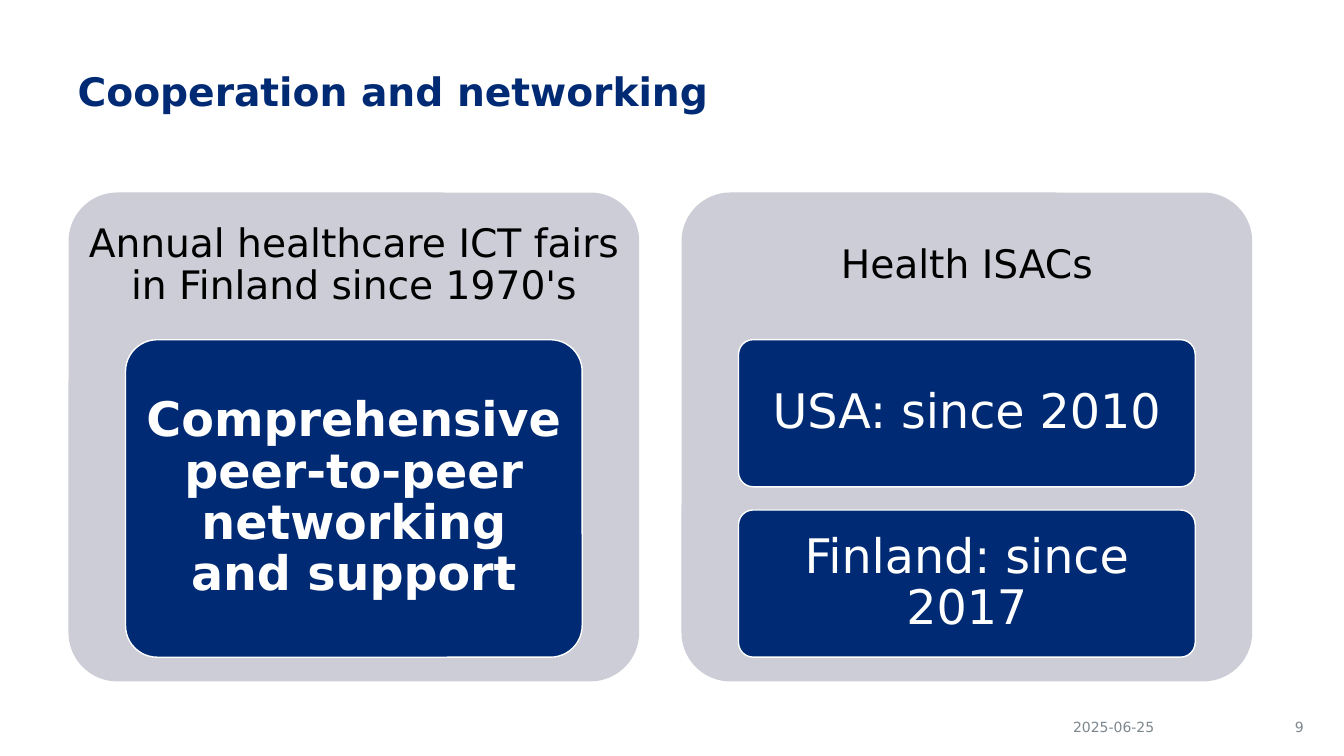
"""Build the slide on cooperation and networking."""
from pptx import Presentation
from pptx.dml.color import RGBColor
from pptx.enum.shapes import MSO_SHAPE
from pptx.enum.text import MSO_ANCHOR, MSO_AUTO_SIZE, PP_ALIGN
from pptx.util import Inches, Pt

TITLE = "Cooperation and networking"
PANELS = [
    ("Annual healthcare ICT fairs in Finland since 1970's", True,
     ["Comprehensive peer-to-peer networking and support"]),
    ("Health ISACs", False, ["USA: since 2010", "Finland: since 2017"]),
]
FOOTER = [
    ("2025-06-25", 10.02, 2.05, PP_ALIGN.CENTER),
    ("9", 12.36, 0.67, PP_ALIGN.RIGHT),
]
COLORS = {"navy": "002B74", "panel": "CCCDD6", "white": "FFFFFF",
          "black": "000000", "footer": "7C878E"}
FONT = "DejaVu Sans"

PANEL_LEFT, PANEL_TOP, PANEL_WIDTH, PANEL_HEIGHT = 0.68, 1.91, 5.66, 4.85
PANEL_STEP = 6.08
HEADING_HEIGHT = 1.46
CARD_WIDTH, CARDS_HEIGHT, CARD_GAP = 4.53, 3.15, 0.23


def color(name):
    """Return the named colour."""
    return RGBColor.from_string(COLORS[name])


def write(shape, text, *, size, ink, bold=False, align=PP_ALIGN.CENTER,
          anchor=MSO_ANCHOR.MIDDLE, spacing=0.9, insets=(0.1, 0.05)):
    """Put one formatted paragraph into a shape."""
    frame = shape.text_frame
    frame.text = text
    frame.word_wrap = True
    frame.auto_size = MSO_AUTO_SIZE.NONE
    frame.vertical_anchor = anchor
    frame.margin_left = frame.margin_right = Inches(insets[0])
    frame.margin_top = frame.margin_bottom = Inches(insets[1])
    paragraph = frame.paragraphs[0]
    paragraph.alignment = align
    paragraph.line_spacing = spacing
    font = paragraph.runs[0].font
    font.name, font.size, font.bold = FONT, Pt(size), bold
    font.color.rgb = color(ink)


def add_box(slide, bounds, fill, outline=None):
    """Add a rounded box with an optional outline."""
    box = slide.shapes.add_shape(MSO_SHAPE.ROUNDED_RECTANGLE, *map(Inches, bounds))
    box.adjustments[0] = 0.1
    box.shadow.inherit = False
    box.fill.solid()
    box.fill.fore_color.rgb = color(fill)
    if outline:
        box.line.color.rgb = color(outline)
        box.line.width = Pt(1)
    else:
        box.line.fill.background()
    return box


def add_panel(slide, left, heading, bold, cards):
    """Add a panel with its heading and stacked cards."""
    add_box(slide, (left, PANEL_TOP, PANEL_WIDTH, PANEL_HEIGHT), "panel")
    heading_bounds = (left, PANEL_TOP, PANEL_WIDTH, HEADING_HEIGHT)
    heading_box = slide.shapes.add_textbox(*map(Inches, heading_bounds))
    write(heading_box, heading, size=28, ink="black", insets=(0.12, 0.12))

    card_left = left + (PANEL_WIDTH - CARD_WIDTH) / 2
    card_height = (CARDS_HEIGHT - CARD_GAP * (len(cards) - 1)) / len(cards)
    for row, label in enumerate(cards):
        top = PANEL_TOP + HEADING_HEIGHT + row * (card_height + CARD_GAP)
        card = add_box(slide, (card_left, top, CARD_WIDTH, card_height), "navy", "white")
        write(card, label, size=34, ink="white", bold=bold, insets=(0.09, 0.07))


def main():
    """Build and save the presentation."""
    deck = Presentation()
    deck.slide_width, deck.slide_height = Inches(13.33), Inches(7.5)
    slide = deck.slides.add_slide(deck.slide_layouts[5])

    title = slide.shapes.title
    title.left, title.top = Inches(0.67), Inches(0.67)
    title.width, title.height = Inches(11.75), Inches(1.21)
    write(title, TITLE, size=28, ink="navy", bold=True,
          align=PP_ALIGN.LEFT, anchor=MSO_ANCHOR.TOP)

    for column, (heading, bold, cards) in enumerate(PANELS):
        add_panel(slide, PANEL_LEFT + column * PANEL_STEP, heading, bold, cards)

    for text, left, width, align in FOOTER:
        note = slide.shapes.add_textbox(*map(Inches, (left, 7.07, width, 0.28)))
        write(note, text, size=10, ink="footer", align=align, spacing=1.0)

    deck.save("out.pptx")


if __name__ == "__main__":
    main()
